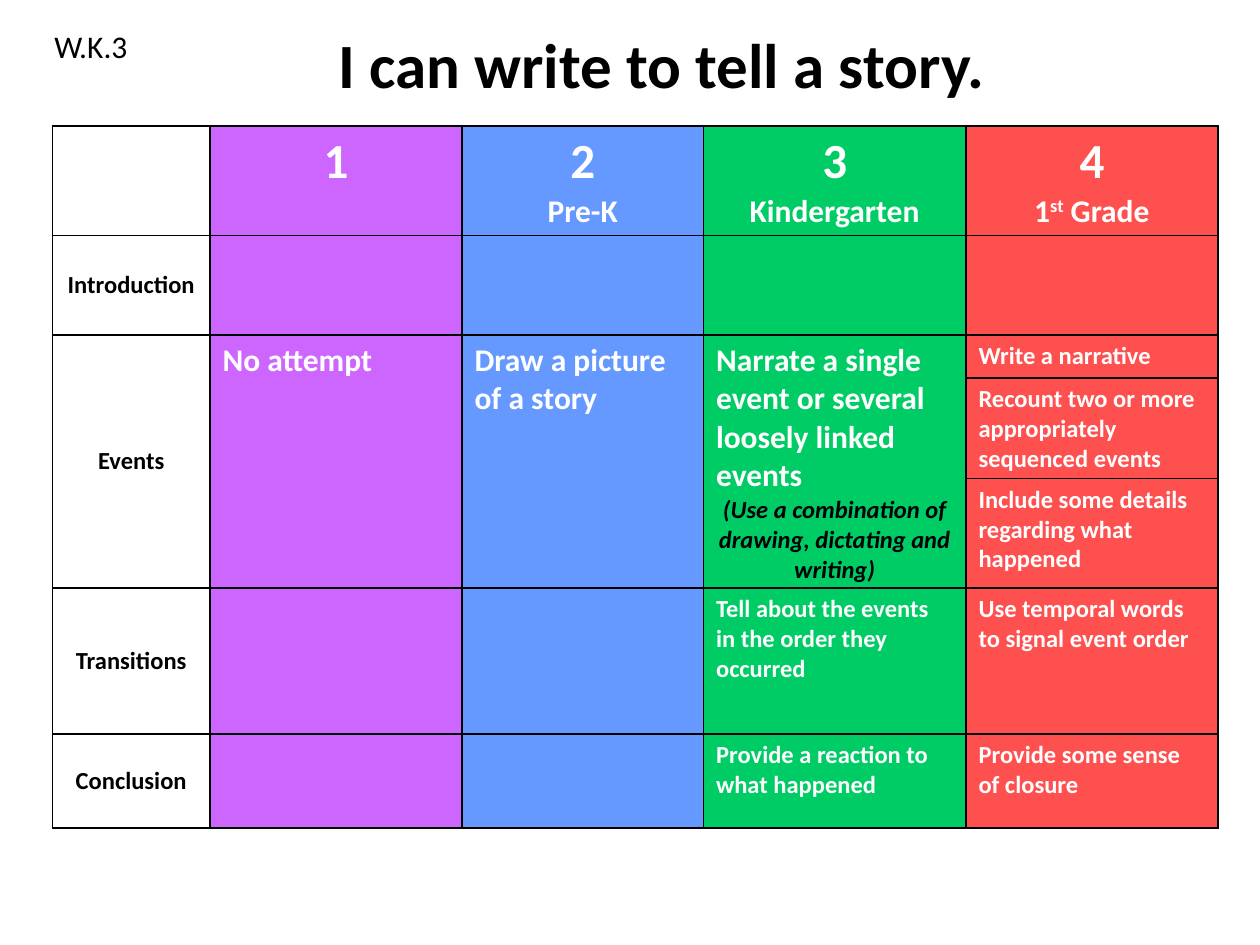
from dataclasses import dataclass
from typing import Optional

from lxml import etree
from pptx import Presentation
from pptx.dml.color import RGBColor
from pptx.enum.text import MSO_ANCHOR, PP_ALIGN
from pptx.oxml.ns import qn
from pptx.util import Pt

LEFT, CENTER = PP_ALIGN.LEFT, PP_ALIGN.CENTER
TOP, MIDDLE = MSO_ANCHOR.TOP, MSO_ANCHOR.MIDDLE

BLACK = RGBColor(0x00, 0x00, 0x00)
WHITE = RGBColor(0xFF, 0xFF, 0xFF)
PURPLE = RGBColor(0xCC, 0x66, 0xFF)
BLUE = RGBColor(0x66, 0x99, 0xFF)
GREEN = RGBColor(0x00, 0xCC, 0x66)
RED = RGBColor(0xFF, 0x50, 0x50)

FONT = "Calibri"
COLUMN_FILLS = (None, PURPLE, BLUE, GREEN, RED)
COLUMN_WIDTHS = (90, 144, 138, 150, 144)
ROW_HEIGHTS = (48, 57, 24.5, 52, 62.5, 83.5, 53.5)
EVENTS_ROWS = (2, 4)
BORDER_WIDTH = Pt(1)
BORDER_SIDES = ("a:lnL", "a:lnR", "a:lnT", "a:lnB")


@dataclass(frozen=True)
class Line:
    """One paragraph; superscript and tail continue the text in the same style."""
    text: str
    size: float = 14
    color: RGBColor = WHITE
    bold: bool = True
    italic: bool = False
    align: PP_ALIGN = LEFT
    superscript: Optional[str] = None
    tail: str = ""


@dataclass(frozen=True)
class Entry:
    row: int
    column: int
    lines: tuple[Line, ...]
    anchor: MSO_ANCHOR = TOP


def score(number: str) -> Line:
    return Line(number, 28, align=CENTER)


def grade(text: str, superscript: Optional[str] = None, tail: str = "") -> Line:
    return Line(text, 18, align=CENTER, superscript=superscript, tail=tail)


def row_label(row: int, text: str) -> Entry:
    return Entry(row, 0, (Line(text, color=BLACK, align=CENTER),), MIDDLE)


ENTRIES = (
    Entry(0, 1, (score("1"),)),
    Entry(0, 2, (score("2"), grade("Pre-K"))),
    Entry(0, 3, (score("3"), grade("Kindergarten"))),
    Entry(0, 4, (score("4"), grade("1", "st", " Grade"))),
    row_label(1, "Introduction"),
    row_label(2, "Events"),
    Entry(2, 1, (Line("No attempt", 18),)),
    Entry(2, 2, (Line("Draw a picture of a story", 18),)),
    Entry(2, 3, (
        Line("Narrate a single event or several loosely linked events", 18),
        Line("(Use a combination of drawing, dictating and writing)",
             color=BLACK, italic=True, align=CENTER),
    )),
    Entry(2, 4, (Line("Write a narrative"),)),
    Entry(3, 4, (Line("Recount two or more appropriately sequenced events"),)),
    Entry(4, 4, (Line("Include some details regarding what happened"),)),
    row_label(5, "Transitions"),
    Entry(5, 3, (Line("Tell about the events in the order they occurred"),)),
    Entry(5, 4, (Line("Use temporal words to signal event order"),)),
    row_label(6, "Conclusion"),
    Entry(6, 3, (Line("Provide a reaction to what happened"),)),
    Entry(6, 4, (Line("Provide some sense of closure"),)),
)


def add_run(paragraph, text: str, line: Line):
    run = paragraph.add_run()
    run.text = text
    formats = {"name": FONT, "size": Pt(line.size),
               "bold": line.bold, "italic": line.italic}
    for attribute, value in formats.items():
        setattr(run.font, attribute, value)
    run.font.color.rgb = line.color
    return run


def write_lines(text_frame, lines: tuple[Line, ...]) -> None:
    for index, line in enumerate(lines):
        paragraph = text_frame.add_paragraph() if index else text_frame.paragraphs[0]
        paragraph.alignment = line.align
        add_run(paragraph, line.text, line)
        if line.superscript:
            raised = add_run(paragraph, line.superscript, line)
            raised.font._element.set("baseline", "30000")
            add_run(paragraph, line.tail, line)


def add_text(slide, left: float, top: float, width: float, height: float,
             line: Line, anchor: MSO_ANCHOR = TOP) -> None:
    shape = slide.shapes.add_textbox(Pt(left), Pt(top), Pt(width), Pt(height))
    shape.text_frame.word_wrap = True
    shape.text_frame.vertical_anchor = anchor
    write_lines(shape.text_frame, (line,))


def add_borders(cell) -> None:
    """Draw all four sides; must run before the fill, which follows in the XML."""
    properties = cell._tc.get_or_add_tcPr()
    for side in BORDER_SIDES:
        border = etree.SubElement(properties, qn(side), w=str(BORDER_WIDTH))
        fill = etree.SubElement(border, qn("a:solidFill"))
        etree.SubElement(fill, qn("a:srgbClr"), val=str(BLACK))


def add_rubric(slide) -> None:
    frame = slide.shapes.add_table(
        len(ROW_HEIGHTS), len(COLUMN_WIDTHS), Pt(30), Pt(72),
        Pt(sum(COLUMN_WIDTHS)), Pt(sum(ROW_HEIGHTS)))
    table = frame.table
    table.first_row = table.horz_banding = False
    for column, width in zip(table.columns, COLUMN_WIDTHS):
        column.width = Pt(width)
    for row, height in zip(table.rows, ROW_HEIGHTS):
        row.height = Pt(height)
        for cell, color in zip(row.cells, COLUMN_FILLS):
            add_borders(cell)
            if color is None:
                cell.fill.background()
            else:
                cell.fill.solid()
                cell.fill.fore_color.rgb = color
    first, last = EVENTS_ROWS
    for column in range(len(COLUMN_WIDTHS) - 1):
        table.cell(first, column).merge(table.cell(last, column))
    for entry in ENTRIES:
        cell = table.cell(entry.row, entry.column)
        cell.vertical_anchor = entry.anchor
        write_lines(cell.text_frame, entry.lines)


def main() -> None:
    presentation = Presentation()
    presentation.slide_width, presentation.slide_height = Pt(720), Pt(540)
    slide = presentation.slides.add_slide(presentation.slide_layouts[6])
    add_text(slide, 72, 0, 612, 72,
             Line("I can write to tell a story.", 36, BLACK, align=CENTER), MIDDLE)
    add_text(slide, 24, 12, 102, 29, Line("W.K.3", 18, BLACK, bold=False))
    add_rubric(slide)
    presentation.save("out.pptx")


if __name__ == "__main__":
    main()
